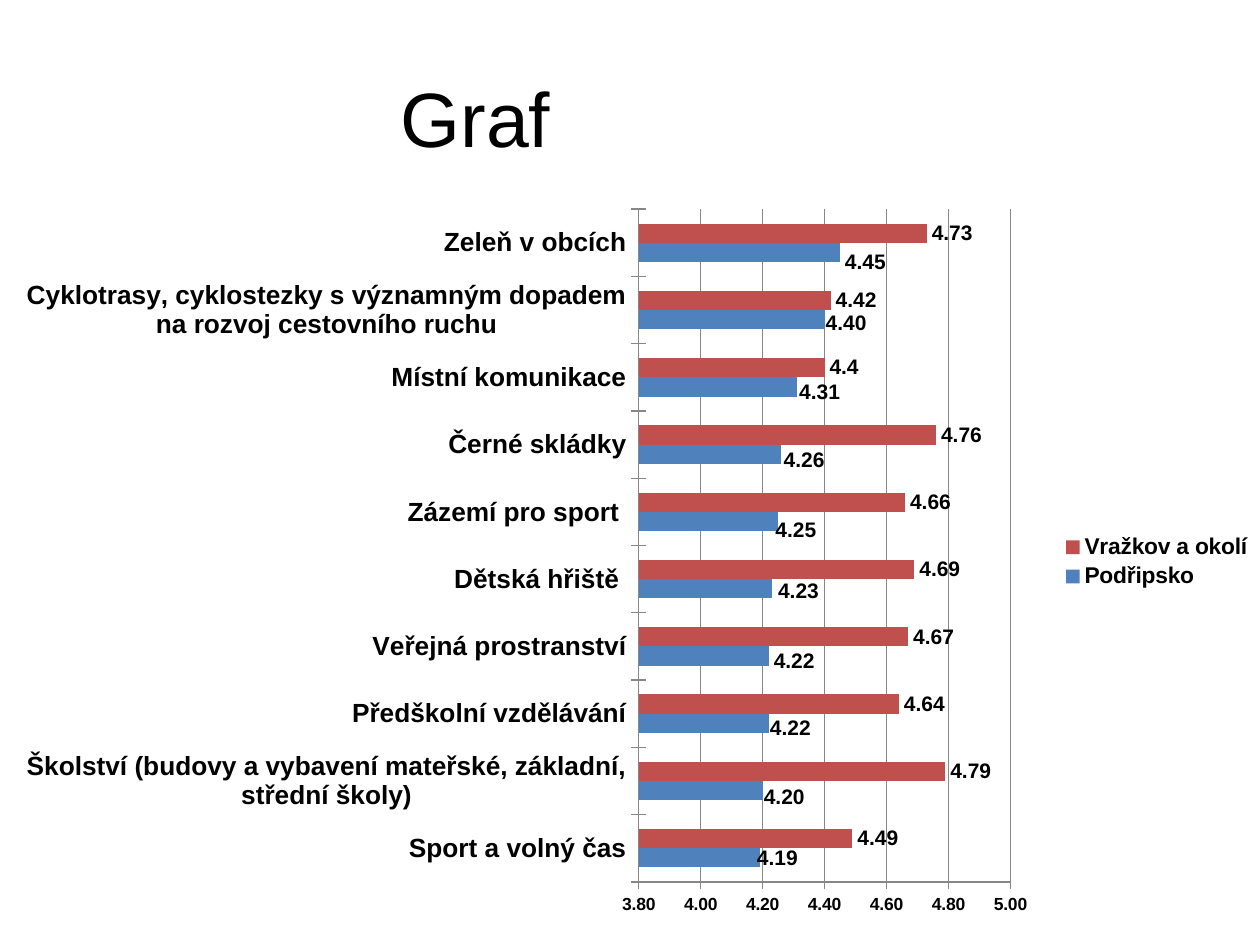
from lxml.etree import SubElement
from pptx import Presentation
from pptx.chart.data import CategoryChartData
from pptx.dml.color import RGBColor
from pptx.enum.chart import (XL_CHART_TYPE, XL_LABEL_POSITION,
                             XL_LEGEND_POSITION, XL_TICK_MARK)
from pptx.enum.text import MSO_ANCHOR, PP_ALIGN
from pptx.oxml.ns import qn
from pptx.util import Inches, Pt

COLORS = {"text": "000000", "line": "878787", "region": "4F81BD", "village": "C0504D"}
CHART_WIDTH, CHART_HEIGHT = 9.98, 5.83

# Category, Podřipsko, Vražkov a okolí, label shift right and down in inches
RATINGS = [
    ("Sport a volný čas", 4.19, 4.49, -0.06, 0),
    ("Školství (budovy a vybavení mateřské, základní, střední školy)",
     4.2, 4.79, -0.03, 0.05),
    ("Předškolní vzdělávání", 4.22, 4.64, -0.03, 0.04),
    ("Veřejná prostranství", 4.22, 4.67, 0, 0.04),
    ("Dětská hřiště ", 4.23, 4.69, 0.01, 0.02),
    ("Zázemí pro sport ", 4.25, 4.66, -0.06, 0.07),
    ("Černé skládky", 4.26, 4.76, -0.02, 0.05),
    ("Místní komunikace", 4.31, 4.4, -0.02, 0.04),
    ("Cyklotrasy, cyklostezky s významným dopadem na rozvoj cestovního ruchu",
     4.4, 4.42, -0.03, 0.03),
    ("Zeleň v obcích", 4.45, 4.73, 0, 0.08),
]


class SlideBuilder:
    font_name = "Arial"

    def __init__(self, page):
        self.page = page

    def style_font(self, font, size, bold=False):
        values = {"name": self.font_name, "size": Pt(size), "bold": bold}
        for name, value in values.items():
            setattr(font, name, value)
        font.color.rgb = RGBColor.from_string(COLORS["text"])

    def style_line(self, line):
        line.color.rgb = RGBColor.from_string(COLORS["line"])
        line.width = Pt(0.75)

    def place(self, element, index, **values):
        """Give a chart part a manual layout, in inches of the chart."""
        for old in element.findall(qn("c:layout")):
            element.remove(old)
        layout = SubElement(element, qn("c:layout"))
        element.insert(index, layout)
        manual = SubElement(layout, qn("c:manualLayout"))
        for name, value in values.items():
            if name in ("x", "y", "w", "h"):
                whole = CHART_WIDTH if name in "xw" else CHART_HEIGHT
                value = f"{value / whole:.4f}"
            SubElement(manual, qn(f"c:{name}")).set("val", value)

    def title(self, text, left, top, width, height):
        box = self.page.shapes.title
        for name, value in zip(("left", "top", "width", "height"),
                               (left, top, width, height)):
            setattr(box, name, Inches(value))
        box.text_frame.text = text
        box.text_frame.vertical_anchor = MSO_ANCHOR.MIDDLE
        para = box.text_frame.paragraphs[0]
        para.alignment = PP_ALIGN.CENTER
        self.style_font(para.runs[0].font, 44)

    def bar_chart(self, left, top):
        names, region, village, shifts_x, shifts_y = zip(*RATINGS)
        data = CategoryChartData()
        data.categories = names
        data.add_series("Podřipsko", region, number_format="#,##0.00")
        data.add_series("Vražkov a okolí", village, number_format="General")
        chart = self.page.shapes.add_chart(
            XL_CHART_TYPE.BAR_CLUSTERED, Inches(left), Inches(top),
            Inches(CHART_WIDTH), Inches(CHART_HEIGHT), data).chart
        chart.has_title = False
        self.style_font(chart.font, 10)

        # Bars and value labels
        plot = chart.plots[0]
        for name, value in {"gap_width": 150, "overlap": 0,
                            "vary_by_categories": False}.items():
            setattr(plot, name, value)
        for series, color in zip(plot.series, ("region", "village")):
            series.format.fill.solid()
            series.format.fill.fore_color.rgb = RGBColor.from_string(COLORS[color])
            labels = series.data_labels
            labels.show_value = True
            labels.position = XL_LABEL_POSITION.OUTSIDE_END
            self.style_font(labels.font, 12, True)

        # Shifted labels of the first series
        first = plot.series[0]
        for index in range(len(RATINGS)):
            label = first.points[index].data_label
            self.style_font(label.font, 12, True)
            label.position = XL_LABEL_POSITION.OUTSIDE_END
        elements = first._element.iter(qn("c:dLbl"))
        for element, x, y in zip(list(elements), shifts_x, shifts_y):
            self.place(element, 1, x=x, y=y)

        # Axes
        for axis, size in ((chart.category_axis, 15), (chart.value_axis, 10)):
            axis.major_tick_mark = XL_TICK_MARK.CROSS
            axis.minor_tick_mark = XL_TICK_MARK.NONE
            self.style_font(axis.tick_labels.font, size, True)
            self.style_line(axis.format.line)
        scale = {"minimum_scale": 3.8, "maximum_scale": 5, "major_unit": 0.2,
                 "has_major_gridlines": True}
        for name, value in scale.items():
            setattr(chart.value_axis, name, value)
        self.style_line(chart.value_axis.major_gridlines.format.line)
        chart.value_axis.tick_labels.number_format = "#,##0.00"
        chart.value_axis.tick_labels.number_format_is_linked = False

        # Legend and plot positions
        chart.has_legend = True
        chart.legend.position = XL_LEGEND_POSITION.RIGHT
        chart.legend.include_in_layout = False
        self.style_font(chart.legend.font, 13, True)
        self.place(chart.legend._element, 1, xMode="edge", yMode="edge",
                   x=8.36, y=2.66, w=1.6, h=0.5)
        plot_area = chart._chartSpace.find(".//" + qn("c:plotArea"))
        self.place(plot_area, 0, layoutTarget="inner", xMode="edge", yMode="edge",
                   x=5.05, y=0.11, w=2.95, h=5.34)


def main():
    deck = Presentation()
    deck.slide_width, deck.slide_height = Inches(10), Inches(7.5)
    builder = SlideBuilder(deck.slides.add_slide(deck.slide_layouts[5]))
    builder.title("Graf", 0.5, 0.3, 6.55, 1.25)
    builder.bar_chart(0.02, 1.55)
    deck.save("out.pptx")


if __name__ == "__main__":
    main()
